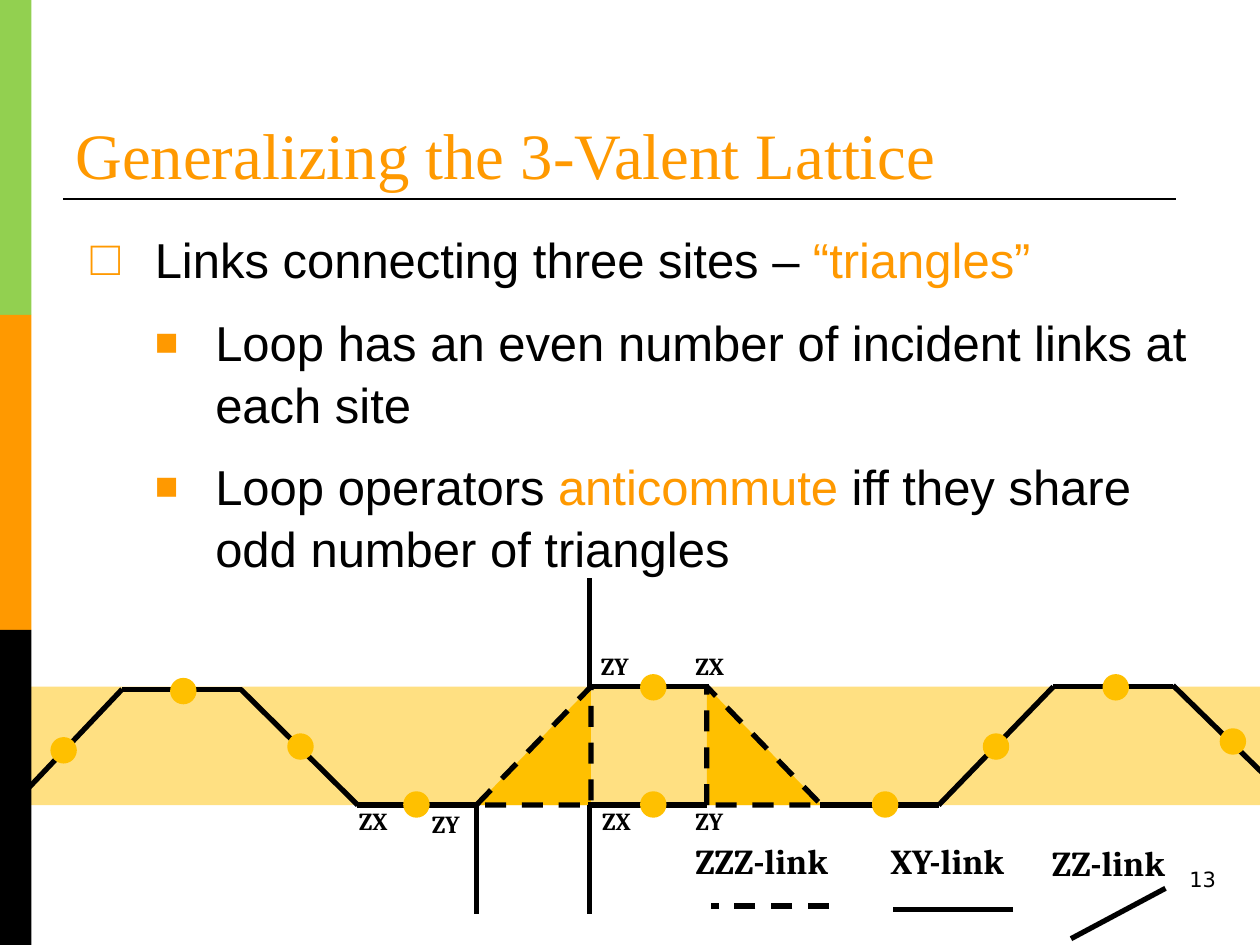
from dataclasses import dataclass

from lxml.etree import SubElement
from pptx import Presentation
from pptx.dml.color import RGBColor
from pptx.enum.dml import MSO_LINE
from pptx.enum.shapes import MSO_CONNECTOR, MSO_SHAPE as SHAPE
from pptx.enum.text import MSO_ANCHOR, PP_ALIGN
from pptx.oxml.ns import qn
from pptx.util import Pt

PX = 9144  # 100 px to the inch


@dataclass(frozen=True)
class Theme:
    ink: str = "000000"
    accent: str = "FF9900"
    green: str = "92D050"
    gold: str = "FFC000"
    title_font: str = "Times New Roman"
    body_font: str = "Arial"
    label_font: str = "Cambria"
    number_font: str = "DejaVu Sans"
    title: int = 37
    body: int = 28
    legend: int = 20
    label: int = 14
    number: int = 12
    rule: float = 1.5
    link: int = 3


T = Theme()

TITLE = "Generalizing the 3-Valent Lattice"
# (level, [(text, colour), ...])
BULLETS = [
    (0, [("Links connecting three sites – ", T.ink), ("“triangles”", T.accent)]),
    (1, [("Loop has an even number of incident links at each site", T.ink)]),
    (1, [("Loop operators ", T.ink), ("anticommute ", T.accent),
         ("iff they share odd number of triangles", T.ink)]),
]
# level: (bullet, bullet size %, left margin px, hanging px)
LEVELS = {0: ("□", 100, 51, 51), 1: ("■", 80, 99, 48)}

SIDEBAR = [T.green, T.accent, T.ink]
BAND = (13, 545, 990, 94)
# (left, top, width, height, apex position)
TRIANGLES = [(378, 545, 91, 94, 1), (561, 545, 91, 94, 0)]
LINKS = [
    (97, 547, 6, 643), (192, 547, 97, 547), (191, 547, 284, 639),
    (378, 639, 283, 639), (561, 639, 467, 639), (563, 545, 468, 545),
    (745, 639, 651, 639), (836, 545, 745, 639), (931, 545, 836, 545),
    (931, 544, 1024, 635),
    (378, 725, 378, 639), (468, 725, 468, 639), (468, 545, 468, 459),
]
SITE_SIZE = 21
SITES = [(40, 585), (135, 538), (228, 582), (320, 628), (508, 628),
         (508, 535), (692, 628), (780, 582), (875, 535), (968, 578)]
LABELS = [("ZX", 275, 635), ("ZY", 333, 637), ("ZX", 468, 635),
          ("ZY", 542, 635), ("ZY", 467, 512), ("ZX", 542, 512)]
# (text, left, top, width, line ends, dash)
LEGEND = [
    ("ZZZ-link", 542, 661, 139, (658, 719, 564, 719), MSO_LINE.DASH),
    ("XY-link", 697, 661, 120, (804, 722, 709, 722), None),
    ("ZZ-link", 825, 663, 120, (925, 705, 850, 745), None),
]


def px(*values):
    return [v * PX for v in values]


def add_run(p, text, font, size, color, bold=False):
    r = p.add_run()
    r.text = text
    r.font.name, r.font.size, r.font.bold = font, Pt(size), bold
    r.font.color.rgb = RGBColor.from_string(color)


def style_line(line, width, dash=None):
    line.color.rgb = RGBColor.from_string(T.ink)
    line.width = Pt(width)
    if dash:
        line.dash_style = dash


def add_line(s, ends, width=T.link, dash=None):
    line = s.shapes.add_connector(MSO_CONNECTOR.STRAIGHT, *px(*ends))
    style_line(line.line, width, dash)
    SubElement(line._element.spPr, qn("a:effectLst"))


def add_filled(s, kind, box, color):
    sp = s.shapes.add_shape(kind, *px(*box))
    sp.shadow.inherit = False
    sp.fill.solid()
    sp.fill.fore_color.rgb = RGBColor.from_string(color)
    sp.line.fill.background()
    return sp


def add_text(s, box, wrap=False):
    tf = s.shapes.add_textbox(*px(*box)).text_frame
    tf.word_wrap = wrap
    return tf


def add_bullet(p, level):
    char, percent, margin, hanging = LEVELS[level]
    pPr = p._p.get_or_add_pPr()
    pPr.set("marL", str(margin * PX))
    pPr.set("indent", str(-hanging * PX))
    color = SubElement(pPr, qn("a:buClr"))
    SubElement(color, qn("a:srgbClr"), val=T.accent)
    SubElement(pPr, qn("a:buSzPct"), val=str(percent * 1000))
    SubElement(pPr, qn("a:buFont"), typeface=T.body_font)
    SubElement(pPr, qn("a:buChar"), char=char)


def add_title(s):
    title = s.shapes.title
    title.left, title.top, title.width, title.height = px(50, 25, 875, 133)
    tf = title.text_frame
    tf.vertical_anchor = MSO_ANCHOR.BOTTOM
    p = tf.paragraphs[0]
    p.alignment = PP_ALIGN.LEFT
    add_run(p, TITLE, T.title_font, T.title, T.accent)
    add_line(s, (50, 158, 933, 158), T.rule)


def add_body(s):
    tf = add_text(s, (62, 175, 905, 175), wrap=True)
    for i, (level, runs) in enumerate(BULLETS):
        p = tf.add_paragraph() if i else tf.paragraphs[0]
        p.level = level
        p.line_spacing = 1.05
        if i:
            p.space_before = Pt(12)
        add_bullet(p, level)
        for text, color in runs:
            add_run(p, text, T.body_font, T.body, color)


def add_lattice(s):
    band = add_filled(s, SHAPE.RECTANGLE, BAND, T.gold)
    rgb = band._element.spPr.find(qn("a:solidFill"))[0]
    SubElement(rgb, qn("a:alpha"), val="49000")
    for i, color in enumerate(SIDEBAR):
        add_filled(s, SHAPE.RECTANGLE, (0, i * 250, 25, 250), color)
    for *box, apex in TRIANGLES:
        sp = add_filled(s, SHAPE.ISOSCELES_TRIANGLE, box, T.gold)
        sp.adjustments[0] = apex
        style_line(sp.line, T.link, MSO_LINE.DASH)
    for ends in LINKS:
        add_line(s, ends)
    for x, y in SITES:
        add_filled(s, SHAPE.OVAL, (x, y, SITE_SIZE, SITE_SIZE), T.gold)
    for text, x, y in LABELS:
        p = add_text(s, (x, y, 46, 34)).paragraphs[0]
        add_run(p, text, T.label_font, T.label, T.ink, bold=True)


def add_legend(s):
    for text, x, y, width, ends, dash in LEGEND:
        p = add_text(s, (x, y, width, 44)).paragraphs[0]
        add_run(p, text, T.label_font, T.legend, T.ink, bold=True)
        add_line(s, ends, dash=dash)


def add_number(s):
    p = add_text(s, (758, 683, 217, 52), wrap=True).paragraphs[0]
    p.alignment = PP_ALIGN.RIGHT
    add_run(p, "13", T.number_font, T.number, T.ink)


def main():
    prs = Presentation()
    prs.slide_width, prs.slide_height = px(1000, 750)
    s = prs.slides.add_slide(prs.slide_layouts[5])
    add_title(s)
    add_body(s)
    add_lattice(s)
    add_legend(s)
    add_number(s)
    prs.save("out.pptx")


if __name__ == "__main__":
    main()
